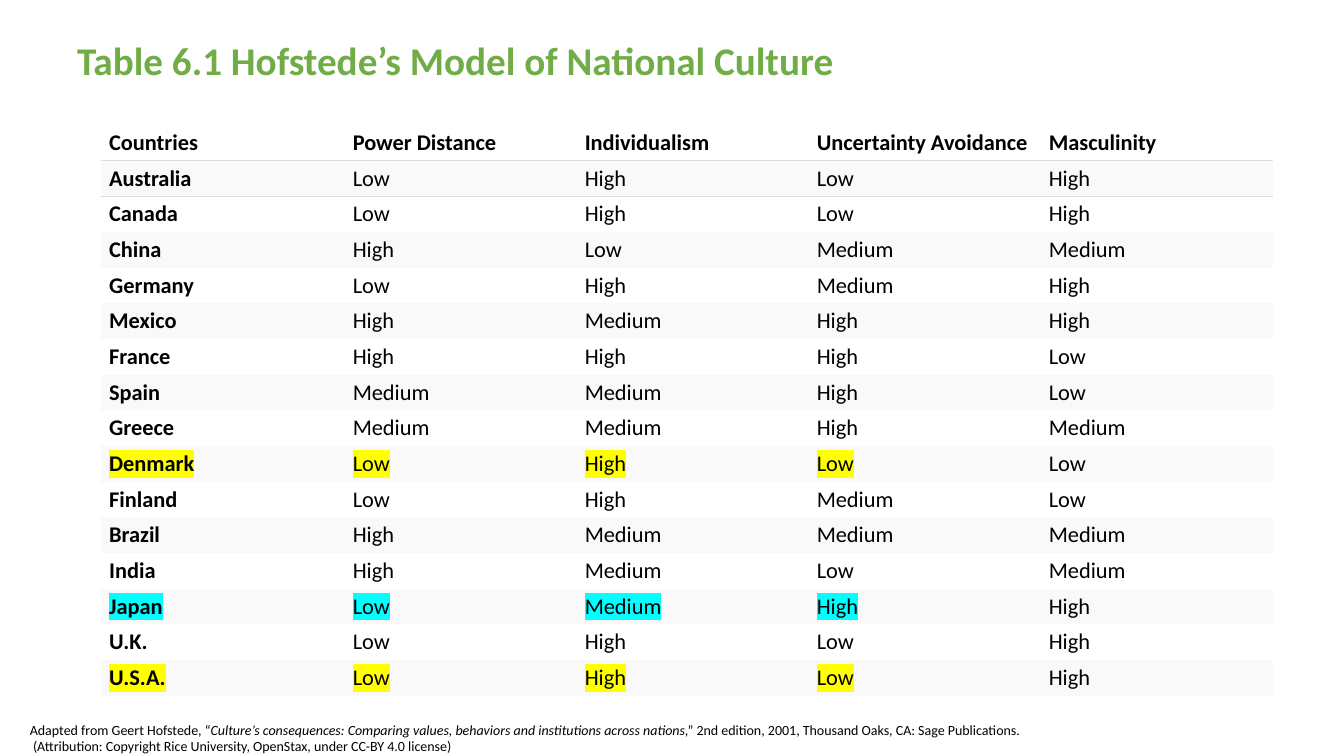
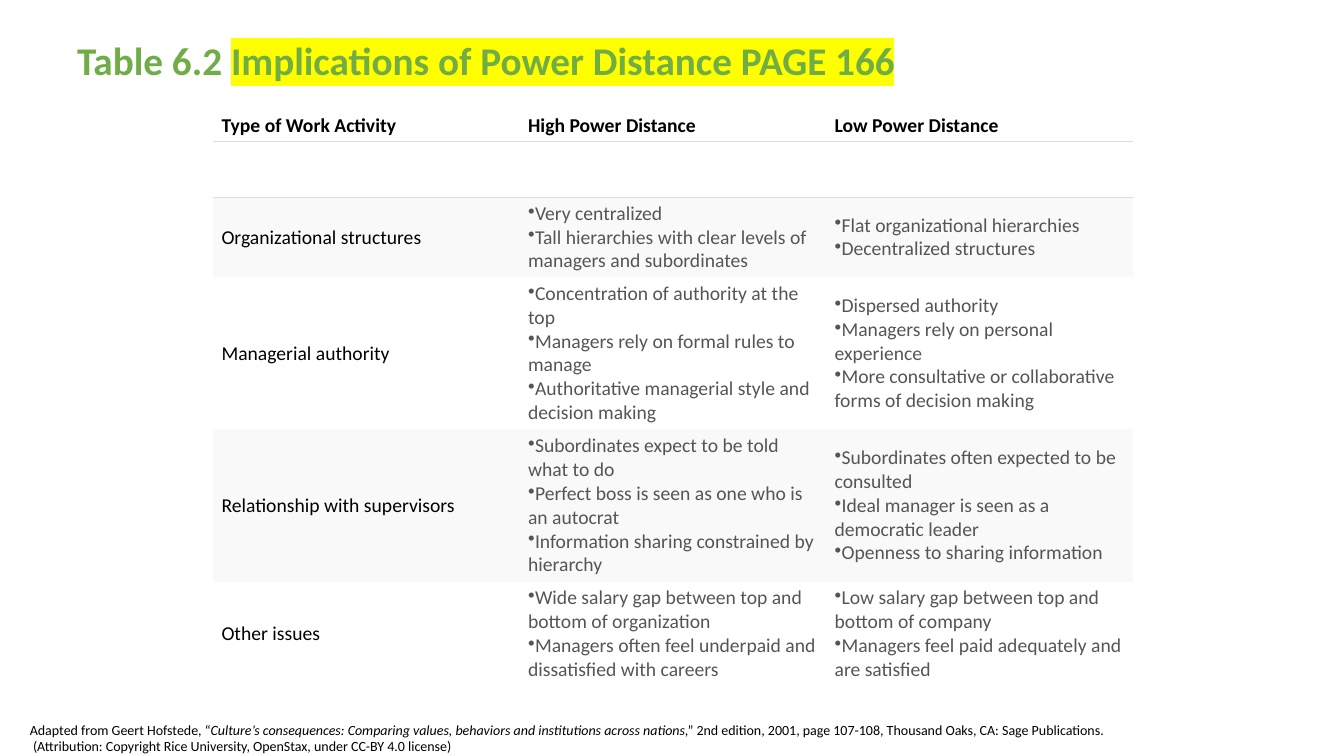
"""Build two slides of tables on national culture and power distance."""
from dataclasses import dataclass

from lxml import etree
from pptx import Presentation
from pptx.dml.color import RGBColor
from pptx.enum import text as text_enum
from pptx.oxml import ns
from pptx.util import Emu, Pt

Anchor = text_enum.MSO_ANCHOR
EMU_PER_PX = 9525
NO_STYLE_NO_GRID = "{2D5ABB26-0587-4C30-8999-92F81FD0307C}"


@dataclass(frozen=True)
class Theme:
    """Colours, font and type sizes shared by the slides."""
    font: str = "Calibri"
    title: str = "70AD47"
    ink: str = "000000"
    muted: str = "555555"
    band: str = "F9F9F9"
    rule: str = "DDDDDD"
    yellow: str = "FFFF00"
    cyan: str = "00FFFF"
    title_size: int = 28
    country_size: int = 16
    activity_size: int = 14
    source_size: int = 10


THEME = Theme()


@dataclass(frozen=True)
class Span:
    """A stretch of text in one style."""
    text: str
    size: int
    color: str = THEME.ink
    bold: bool = False
    italic: bool = False
    highlight: str = ""


@dataclass(frozen=True)
class Entry:
    """The paragraphs of one table cell."""
    spans: tuple[Span, ...] = ()
    bulleted: bool = False


@dataclass(frozen=True)
class Grid:
    """Placement and contents of one table, in px."""
    left: int
    top: int
    widths: list[int]
    heights: list[int]
    rows: list[list[Entry]]


@dataclass(frozen=True)
class Page:
    """One slide: its title, table and source line."""
    title: tuple[Span, ...]
    title_width: int
    edition: str
    source_width: int
    grid: Grid


def px(length: int) -> Emu:
    """Turn px into EMU."""
    return Emu(length * EMU_PER_PX)


def add_color(parent, tag: str, color: str):
    """Make a colour-holding element such as a fill or highlight."""
    holder = etree.SubElement(parent, ns.qn(tag))
    etree.SubElement(holder, ns.qn("a:srgbClr"), val=color)
    return holder


def add_span(paragraph, span: Span) -> None:
    """Add one styled run to a paragraph."""
    run = paragraph.add_run()
    run.text = span.text
    font = run.font
    font.name, font.size = THEME.font, Pt(span.size)
    font.bold, font.italic = span.bold, span.italic
    font.color.rgb = RGBColor.from_string(span.color)
    if span.highlight:
        properties = run._r.get_or_add_rPr()
        highlight = add_color(properties, "a:highlight", span.highlight)
        properties.find(ns.qn("a:solidFill")).addnext(highlight)


def add_paragraphs(frame, paragraphs: list[tuple[Span, ...]]) -> None:
    """Fill a text frame with paragraphs of spans."""
    for index, spans in enumerate(paragraphs):
        paragraph = frame.add_paragraph() if index else frame.paragraphs[0]
        for span in spans:
            add_span(paragraph, span)


def add_title(slide, spans: tuple[Span, ...], width: int) -> None:
    """Add the slide title."""
    frame = slide.shapes.add_textbox(px(64), px(25), px(width), px(69)).text_frame
    frame.word_wrap = True
    frame.vertical_anchor = Anchor.MIDDLE
    add_paragraphs(frame, [spans])
    frame.paragraphs[0].line_spacing = 0.9


def add_source(slide, edition: str, width: int) -> None:
    """Add the source and attribution lines at the foot."""
    frame = slide.shapes.add_textbox(px(19), px(682), px(width), px(42)).text_frame
    frame.word_wrap = False
    frame.auto_size = text_enum.MSO_AUTO_SIZE.SHAPE_TO_FIT_TEXT
    size = THEME.source_size
    work = "Culture’s consequences: Comparing values, behaviors and institutions across nations"
    add_paragraphs(frame, [
        (Span("Adapted from Geert Hofstede, “", size),
         Span(work, size, italic=True),
         Span(f",” 2nd edition, 2001, {edition}Thousand Oaks, CA: Sage Publications.", size)),
        (Span(" (Attribution: Copyright Rice University, OpenStax, under CC-BY 4.0 license)", size),),
    ])


def add_border(cell, edge: str) -> None:
    """Draw a thin rule on one edge of a cell."""
    properties = cell._tc.get_or_add_tcPr()
    line = etree.Element(ns.qn(edge), w=str(Pt(1)))
    add_color(line, "a:solidFill", THEME.rule)
    properties.insert(0, line)


def fill_cell(cell, entry: Entry, row_index: int) -> None:
    """Write and style one table cell."""
    cell.margin_left = cell.margin_right = px(8)
    cell.margin_top = cell.margin_bottom = px(4)
    cell.vertical_anchor = Anchor.MIDDLE if row_index else Anchor.BOTTOM
    add_paragraphs(cell.text_frame, [(span,) for span in entry.spans])
    if entry.bulleted:
        for paragraph in cell.text_frame.paragraphs:
            properties = paragraph._p.get_or_add_pPr()
            properties.set("marL", "0")
            properties.set("indent", "0")
            etree.SubElement(properties, ns.qn("a:buChar"), char="•")


def add_grid(slide, grid: Grid) -> None:
    """Add a table with a ruled header and light bands."""
    frame = slide.shapes.add_table(
        len(grid.rows), len(grid.widths), px(grid.left), px(grid.top),
        px(sum(grid.widths)), px(sum(grid.heights)))
    table = frame.table
    table.first_row = table.horz_banding = False
    table._tbl.tblPr.find(ns.qn("a:tableStyleId")).text = NO_STYLE_NO_GRID
    for column, width in zip(table.columns, grid.widths):
        column.width = px(width)
    for row_index, (row, height) in enumerate(zip(grid.rows, grid.heights)):
        table.rows[row_index].height = px(height)
        banded = row_index in BANDS[len(grid.widths)]
        for column_index in range(len(grid.widths)):
            cell = table.cell(row_index, column_index)
            if row:
                fill_cell(cell, row[column_index], row_index)
            if banded:
                cell.fill.solid()
                cell.fill.fore_color.rgb = RGBColor.from_string(THEME.band)
            else:
                cell.fill.background()
            if row_index < 2:
                add_border(cell, ("a:lnB", "a:lnT")[row_index])
        if not row:
            table.cell(row_index, 0).merge(table.cell(row_index, len(grid.widths) - 1))


BANDS = {5: range(1, 16, 2), 3: range(2, 6, 2)}

COUNTRY_HEADINGS = ("Countries", "Power Distance", "Individualism",
                    "Uncertainty Avoidance", "Masculinity")
COUNTRIES = (
    ("Australia", "Low", "High", "Low", "High"),
    ("Canada", "Low", "High", "Low", "High"),
    ("China", "High", "Low", "Medium", "Medium"),
    ("Germany", "Low", "High", "Medium", "High"),
    ("Mexico", "High", "Medium", "High", "High"),
    ("France", "High", "High", "High", "Low"),
    ("Spain", "Medium", "Medium", "High", "Low"),
    ("Greece", "Medium", "Medium", "High", "Medium"),
    ("Denmark", "Low", "High", "Low", "Low"),
    ("Finland", "Low", "High", "Medium", "Low"),
    ("Brazil", "High", "Medium", "Medium", "Medium"),
    ("India", "High", "Medium", "Low", "Medium"),
    ("Japan", "Low", "Medium", "High", "High"),
    ("U.K.", "Low", "High", "Low", "High"),
    ("U.S.A.", "Low", "High", "Low", "High"),
)
COUNTRY_HIGHLIGHTS = {"Denmark": THEME.yellow, "Japan": THEME.cyan, "U.S.A.": THEME.yellow}

ACTIVITY_HEADINGS = ("Type of Work Activity", "High Power Distance", "Low Power Distance")
ACTIVITIES = (
    ("Organizational structures",
     ("Very centralized",
      "Tall hierarchies with clear levels of managers and subordinates"),
     ("Flat organizational hierarchies", "Decentralized structures")),
    ("Managerial authority",
     ("Concentration of authority at the top",
      "Managers rely on formal rules to manage",
      "Authoritative managerial style and decision making"),
     ("Dispersed authority",
      "Managers rely on personal experience",
      "More consultative or collaborative forms of decision making")),
    ("Relationship with supervisors",
     ("Subordinates expect to be told what to do",
      "Perfect boss is seen as one who is an autocrat",
      "Information sharing constrained by hierarchy"),
     ("Subordinates often expected to be consulted",
      "Ideal manager is seen as a democratic leader",
      "Openness to sharing information")),
    ("Other issues",
     ("Wide salary gap between top and bottom of organization",
      "Managers often feel underpaid and dissatisfied with careers"),
     ("Low salary gap between top and bottom of company",
      "Managers feel paid adequately and are satisfied")),
)


def heading_row(headings: tuple[str, ...], size: int) -> list[Entry]:
    """Make the bold header cells."""
    return [Entry((Span(heading, size, bold=True),)) for heading in headings]


def country_row(values: tuple[str, ...]) -> list[Entry]:
    """Make one country's cells, highlighted in all but the last column."""
    highlight = COUNTRY_HIGHLIGHTS.get(values[0], "")
    last = len(values) - 1
    return [Entry((Span(value, THEME.country_size, bold=index == 0,
                        highlight=highlight if index < last else ""),))
            for index, value in enumerate(values)]


def activity_row(activity: str, *columns: tuple[str, ...]) -> list[Entry]:
    """Make one work activity's cells with bulleted points."""
    size = THEME.activity_size
    points = [Entry(tuple(Span(point, size, THEME.muted) for point in column), bulleted=True)
              for column in columns]
    return [Entry((Span(activity, size),)), *points]


def title_span(text: str, highlight: str = "") -> Span:
    """Make a span in the title style."""
    return Span(text, THEME.title_size, THEME.title, bold=True, highlight=highlight)


PAGES = (
    Page((title_span("Table 6.1 Hofstede’s Model of National Culture"),), 1129, "", 976,
         Grid(96, 95, [232] + [221] * 4, [58] + [34] * len(COUNTRIES),
              [heading_row(COUNTRY_HEADINGS, THEME.country_size),
               *(country_row(values) for values in COUNTRIES)])),
    Page((title_span("Table 6.2 "),
          title_span("Implications of Power Distance PAGE 166", THEME.yellow)),
         935, "page 107-108, ", 1058,
         Grid(203, 104, [292] * 3, [31, 53, 76, 145, 145, 99],
              [heading_row(ACTIVITY_HEADINGS, THEME.activity_size), [],
               *(activity_row(*activity) for activity in ACTIVITIES)])),
)


def main() -> None:
    """Build and save the presentation."""
    presentation = Presentation()
    presentation.slide_width, presentation.slide_height = px(1280), px(720)
    for page in PAGES:
        slide = presentation.slides.add_slide(presentation.slide_layouts[6])
        add_title(slide, page.title, page.title_width)
        add_source(slide, page.edition, page.source_width)
        add_grid(slide, page.grid)
    presentation.save("out.pptx")


if __name__ == "__main__":
    main()
